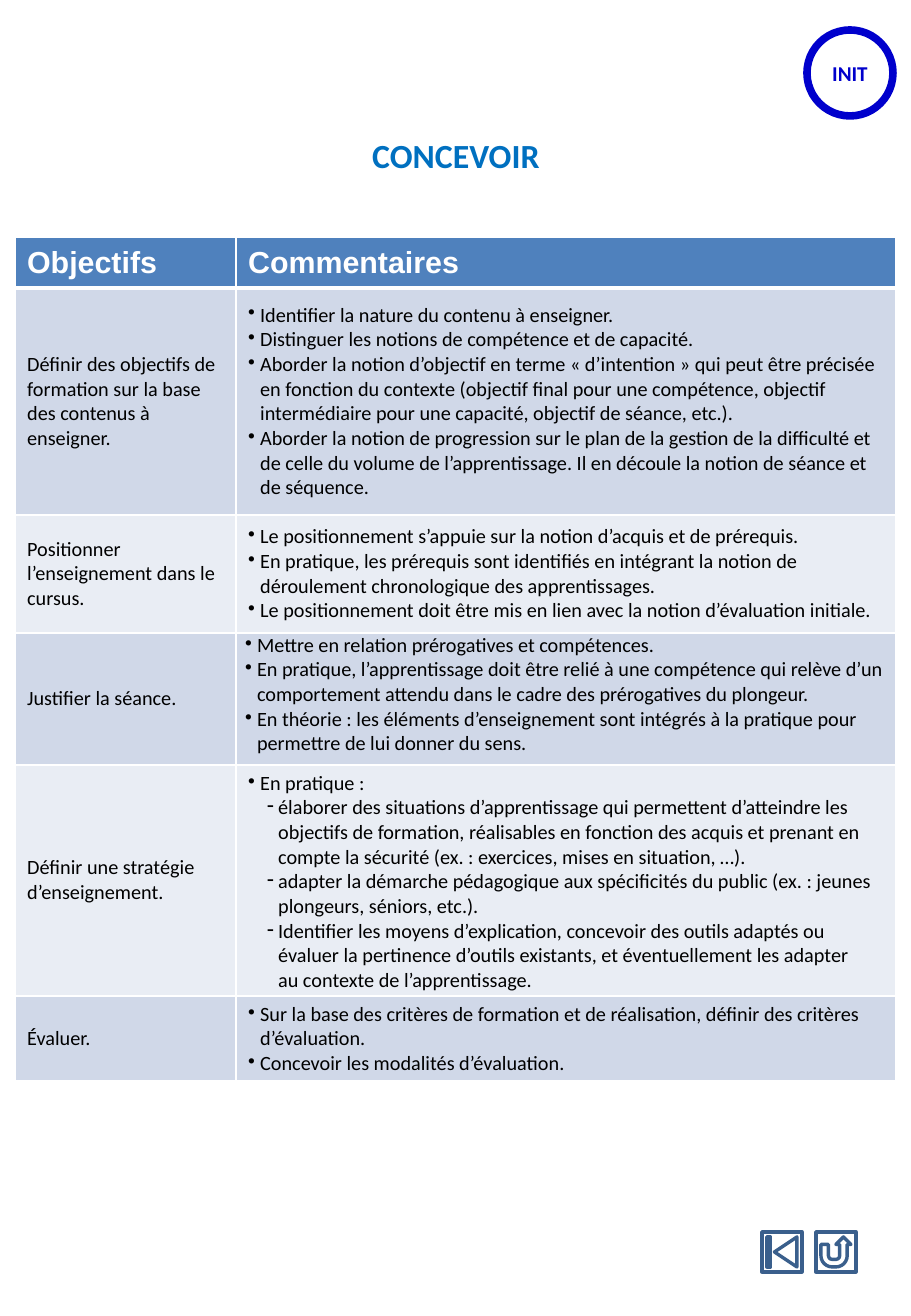
"""Build the CONCEVOIR teaching sheet with its table of objectives."""
from lxml.etree import SubElement
from pptx import Presentation
from pptx.dml.color import RGBColor
from pptx.enum.shapes import MSO_SHAPE
from pptx.enum.text import MSO_ANCHOR, PP_ALIGN
from pptx.oxml.ns import qn
from pptx.util import Pt

PX = 7526
WHITE = RGBColor(0xFF, 0xFF, 0xFF)
BLACK = RGBColor(0, 0, 0)
NAVY = RGBColor(0, 0, 0xCC)
BLUE = RGBColor(0, 0x70, 0xC0)
STEEL = RGBColor(0x3A, 0x5F, 0x8C)
HEAD = RGBColor(0x4F, 0x81, 0xBD)
BANDS = [RGBColor(0xD0, 0xD8, 0xE8), RGBColor(0xE9, 0xED, 0xF4)]
LEVELS = {"•": (12, -12), "-": (30, -11)}
ROWS = [
    ("Définir des objectifs de formation sur la base des contenus à enseigner.", [
        "• Identifier la nature du contenu à enseigner.",
        "• Distinguer les notions de compétence et de capacité.",
        "• Aborder la notion d’objectif en terme « d’intention » qui peut être précisée "
        "en fonction du contexte (objectif final pour une compétence, objectif "
        "intermédiaire pour une capacité, objectif de séance, etc.).",
        "• Aborder la notion de progression sur le plan de la gestion de la difficulté et "
        "de celle du volume de l’apprentissage. Il en découle la notion de séance et "
        "de séquence."]),
    ("Positionner l’enseignement dans le cursus.", [
        "• Le positionnement s’appuie sur la notion d’acquis et de prérequis.",
        "• En pratique, les prérequis sont identifiés en intégrant la notion de "
        "déroulement chronologique des apprentissages.",
        "• Le positionnement doit être mis en lien avec la notion d’évaluation initiale."]),
    ("Justifier la séance.", [
        "• Mettre en relation prérogatives et compétences.",
        "• En pratique, l’apprentissage doit être relié à une compétence qui relève d’un "
        "comportement attendu dans le cadre des prérogatives du plongeur.",
        "• En théorie : les éléments d’enseignement sont intégrés à la pratique pour "
        "permettre de lui donner du sens."]),
    ("Définir une stratégie d’enseignement.", [
        "• En pratique :",
        "- élaborer des situations d’apprentissage qui permettent d’atteindre les "
        "objectifs de formation, réalisables en fonction des acquis et prenant en "
        "compte la sécurité (ex. : exercices, mises en situation, …).",
        "- adapter la démarche pédagogique aux spécificités du public (ex. : jeunes "
        "plongeurs, séniors, etc.).",
        "- Identifier les moyens d’explication, concevoir des outils adaptés ou\v"
        "évaluer la pertinence d’outils existants, et éventuellement les adapter\v"
        "au contexte de l’apprentissage."]),
    ("Évaluer.", [
        "• Sur la base des critères de formation et de réalisation, définir des critères "
        "d’évaluation.",
        "• Concevoir les modalités d’évaluation."]),
]


def style(para, name, size, color, bold=False):
    font = para.font
    font.name, font.size, font.bold = name, Pt(size), bold
    font.color.rgb = color


def border(cell, side, width):
    line = SubElement(cell._tc.get_or_add_tcPr(), qn(f"a:ln{side}"), w=str(Pt(width)))
    fill = SubElement(line, qn("a:solidFill"))
    SubElement(fill, qn("a:srgbClr"), val=str(WHITE))


deck = Presentation()
deck.slide_width, deck.slide_height = 911 * PX, 1316 * PX
slide = deck.slides.add_slide(deck.slide_layouts[6])
shapes = slide.shapes

badge = shapes.add_shape(MSO_SHAPE.OVAL, 807 * PX, 30 * PX, 86 * PX, 86 * PX)
badge.shadow.inherit = False
badge.fill.solid()
badge.fill.fore_color.rgb = WHITE
badge.line.color.rgb = NAVY
badge.line.width = Pt(4.5)
badge.text_frame.word_wrap = False
badge.text_frame.text = "INIT"

title = shapes.add_textbox(146 * PX, 129 * PX, 620 * PX, 53 * PX)
title.text_frame.word_wrap = True
title.text_frame.text = "CONCEVOIR"

for box, size, color in [(badge, 12.5, NAVY), (title, 20, BLUE)]:
    para = box.text_frame.paragraphs[0]
    para.alignment = PP_ALIGN.CENTER
    style(para, "Calibri", size, color, True)

table = shapes.add_table(6, 2, 15 * PX, 237 * PX, 881 * PX, 826 * PX).table
for col, width in zip(table.columns, [221, 660]):
    col.width = width * PX
for row, height in zip(table.rows, [51, 227, 118, 132, 221, 77]):
    row.height = height * PX

for r, (goal, notes) in enumerate([("Objectifs", ["Commentaires"])] + ROWS):
    for c, lines in enumerate([[goal], notes]):
        cell = table.cell(r, c)
        cell.vertical_anchor = MSO_ANCHOR.MIDDLE
        for side in "LRTB":
            thick = (r, side) in [(0, "B"), (1, "T")]
            border(cell, side, 3 if thick else 1)
        cell.fill.solid()
        cell.fill.fore_color.rgb = BANDS[(r - 1) % 2] if r else HEAD
        frame = cell.text_frame
        for n, line in enumerate(lines):
            para = frame.add_paragraph() if n else frame.paragraphs[0]
            mark = line[0]
            if mark in LEVELS:
                props = para._p.get_or_add_pPr()
                left, hang = LEVELS[mark]
                props.set("marL", str(left * PX))
                props.set("indent", str(hang * PX))
                SubElement(props, qn("a:buChar"), char=mark)
                line = line[2:]
            para.text = line
            if r:
                style(para, "Calibri", 12, BLACK)
            else:
                style(para, "Arial", 18, WHITE, True)

reason = table.cell(3, 1)
reason.vertical_anchor = MSO_ANCHOR.TOP
reason.margin_left = reason.margin_right = 9 * PX
reason.margin_top = reason.margin_bottom = 0

for kind, left in [(MSO_SHAPE.ACTION_BUTTON_BEGINNING, 762),
                   (MSO_SHAPE.ACTION_BUTTON_RETURN, 816)]:
    button = shapes.add_shape(kind, left * PX, 1232 * PX, 40 * PX, 40 * PX)
    button.shadow.inherit = False
    button.fill.background()
    button.line.color.rgb = STEEL
    button.line.width = Pt(2)

deck.save("out.pptx")
